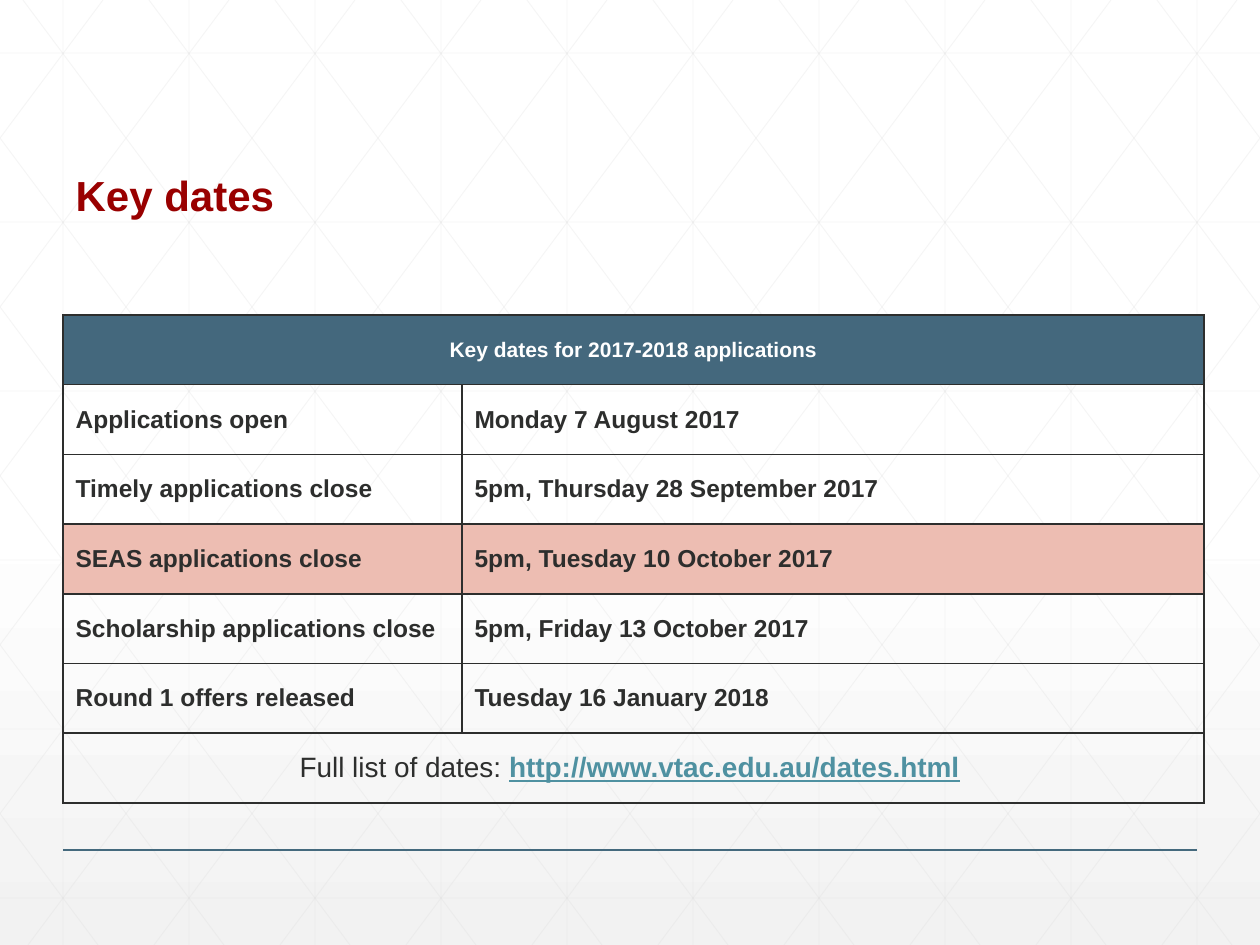
import copy
from dataclasses import dataclass
from typing import Optional

import pptx
import pptx.dml.color
import pptx.enum.shapes
import pptx.enum.text
import pptx.oxml
import pptx.oxml.ns
import pptx.util
from lxml import etree

PX = 914400 / 126  # EMU per px
W, H = 1260, 945
MARGIN = 63
PITCH = 126  # spacing of the background pattern
RUN = 705  # sideways travel of a diagonal over the slide height


@dataclass(frozen=True)
class Theme:
    font: str = "Arial"
    title: str = "990000"
    ink: str = "2D2E2D"
    white: str = "FFFFFF"
    shade: str = "F2F2F2"
    header: str = "44687D"
    highlight: str = "EDBDB2"
    link: str = "4F91A1"
    rule: str = "44697D"
    pattern: str = "D9D9D9"
    title_pt: int = 24
    header_pt: int = 12
    body_pt: int = 14
    footer_pt: int = 16


T = Theme()


@dataclass(frozen=True)
class Run:
    text: str
    size: int = T.body_pt
    color: str = T.ink
    bold: bool = True
    underline: bool = False


@dataclass(frozen=True)
class Row:
    cells: tuple[tuple[Run, ...], ...]  # a single cell spans the table
    fill: Optional[str] = None


ROWS = (
    Row(((Run("Key dates for 2017-2018 applications", T.header_pt, T.white),),), T.header),
    Row(((Run("Applications open"),), (Run("Monday 7 August 2017"),))),
    Row(((Run("Timely applications close"),), (Run("5pm, Thursday 28 September 2017"),))),
    Row(((Run("SEAS applications close"),), (Run("5pm, Tuesday 10 October 2017"),)), T.highlight),
    Row(((Run("Scholarship applications close"),), (Run("5pm, Friday 13 October 2017"),))),
    Row(((Run("Round 1 offers released"),), (Run("Tuesday 16 January 2018"),))),
    Row(((Run("Full list of dates: ", T.footer_pt, bold=False),
          Run("http://www.vtac.edu.au/dates.html", T.footer_pt, T.link, underline=True),
          Run(" ", T.footer_pt)),)),
)


def px(n: float) -> int:
    return round(n * PX)


def rgb(color: str) -> pptx.dml.color.RGBColor:
    return pptx.dml.color.RGBColor.from_string(color)


def add_run(p, run: Run) -> None:
    r = p.add_run()
    r.text = run.text
    f = r.font
    f.name, f.size = T.font, pptx.util.Pt(run.size)
    f.bold, f.underline = run.bold, run.underline
    f.color.rgb = rgb(run.color)


def add_line(s, x1: float, y1: float, x2: float, y2: float,
             color: str, width: float, alpha: int = 100) -> None:
    c = s.shapes.add_connector(pptx.enum.shapes.MSO_CONNECTOR.STRAIGHT,
                               px(x1), px(y1), px(x2), px(y2))
    c.line.width = pptx.util.Pt(width)
    c.line.color.rgb = rgb(color)
    qn = pptx.oxml.ns.qn
    if alpha < 100:
        clr = c._element.spPr.find(".//" + qn("a:srgbClr"))
        etree.SubElement(clr, qn("a:alpha"), val=str(alpha * 1000))
    etree.SubElement(c._element.spPr, qn("a:effectLst"))


def add_background(s) -> None:
    fill = s.background.fill
    fill.gradient()
    fill.gradient_angle = 270
    for stop, color, pos in zip(fill.gradient_stops, (T.white, T.shade), (0, 1)):
        stop.color.rgb = rgb(color)
        stop.position = pos
    first = s._element.xpath(".//a:gsLst/a:gs")[0]
    middle = copy.deepcopy(first)
    middle.set("pos", "53000")
    first.addnext(middle)


def add_pattern(s) -> None:
    style = (T.pattern, 0.5, 25)
    for x in range(MARGIN, W, PITCH):
        add_line(s, x, 0, x, H, *style)
    for y in range(53, H, 169):
        add_line(s, 0, y, W, y, *style)
    # Diagonals cut off at the slide edges, each with its mirror image
    for x in range(23 - 5 * PITCH, W, PITCH):
        x1, x2 = max(x, 0), min(x + RUN, W)
        y1, y2 = (x1 - x) * H / RUN, (x2 - x) * H / RUN
        add_line(s, x1, y1, x2, y2, *style)
        add_line(s, W - x1, y1, W - x2, y2, *style)


def add_title(s, text: str) -> None:
    sp = s.shapes.title
    sp.left, sp.top, sp.width, sp.height = px(MARGIN), px(69), px(1134), px(158)
    tf = sp.text_frame
    tf.word_wrap = True
    tf.auto_size = pptx.enum.text.MSO_AUTO_SIZE.NONE
    tf.vertical_anchor = pptx.enum.text.MSO_ANCHOR.BOTTOM
    p = tf.paragraphs[0]
    p.alignment = pptx.enum.text.PP_ALIGN.LEFT
    p.line_spacing = 0.9
    add_run(p, Run(text, T.title_pt, T.title))
    s.shapes._spTree.append(sp._element)  # in front of the pattern


def style_cell(cell, fill: Optional[str]) -> None:
    tcPr = cell._tc.get_or_add_tcPr()
    for side in "LRTB":
        tcPr.append(pptx.oxml.parse_xml(
            f'<a:ln{side} {pptx.oxml.ns.nsdecls("a")} w="12700"><a:solidFill>'
            f'<a:srgbClr val="{T.ink}"/></a:solidFill></a:ln{side}>'))
    if fill:
        cell.fill.solid()
        cell.fill.fore_color.rgb = rgb(fill)
    else:
        cell.fill.background()
    cell.vertical_anchor = pptx.enum.text.MSO_ANCHOR.MIDDLE


def add_dates(s, rows: tuple[Row, ...]) -> None:
    widths, height = (399, 742), 488
    table = s.shapes.add_table(len(rows), len(widths), px(MARGIN), px(315),
                               px(sum(widths)), px(height)).table
    table.first_row = table.horz_banding = False
    for column, width in zip(table.columns, widths):
        column.width = px(width)
    for i, row in enumerate(rows):
        table.rows[i].height = px(height / len(rows))
        for j in range(len(widths)):
            style_cell(table.cell(i, j), row.fill)
        spans = len(row.cells) == 1
        if spans:
            table.cell(i, 0).merge(table.cell(i, len(widths) - 1))
        for j, runs in enumerate(row.cells):
            p = table.cell(i, j).text_frame.paragraphs[0]
            align = pptx.enum.text.PP_ALIGN
            p.alignment = align.CENTER if spans else align.LEFT
            for run in runs:
                add_run(p, run)


def main() -> None:
    prs = pptx.Presentation()
    prs.slide_width, prs.slide_height = px(W), px(H)
    s = prs.slides.add_slide(prs.slide_layouts[5])
    # Backdrop
    add_background(s)
    add_pattern(s)
    add_line(s, MARGIN, 850, W - MARGIN, 850, T.rule, 1)
    # Content
    add_title(s, "Key dates")
    add_dates(s, ROWS)
    prs.save("out.pptx")


if __name__ == "__main__":
    main()
